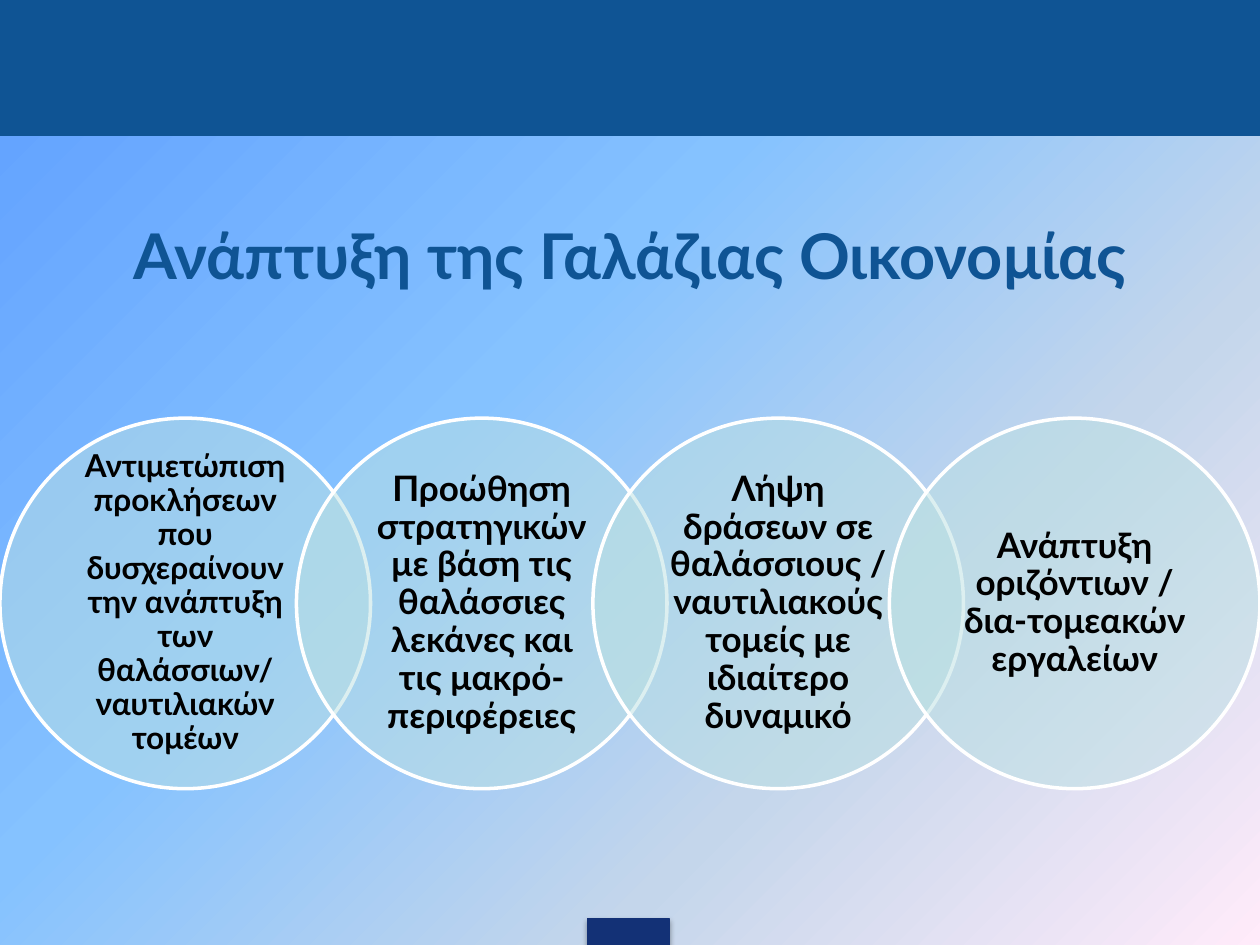
from dataclasses import dataclass
from math import sqrt

from lxml.etree import SubElement
from pptx import Presentation
from pptx.dml.color import RGBColor
from pptx.enum.shapes import MSO_SHAPE as Preset
from pptx.enum.text import MSO_ANCHOR as Anchor, PP_ALIGN as Align
from pptx.oxml.ns import qn
from pptx.shapes.autoshape import Shape
from pptx.slide import Slide
from pptx.util import Cm, Pt

WIDTH, HEIGHT = 25.4, 19.05
FONT = "Lato"
BLUE, NAVY, AQUA, WHITE, BLACK = "0F5494", "133176", "BBE0E3", "FFFFFF", "000000"
BACKGROUND = [(0, "5E9EFF"), (40, "85C2FF"), (70, "C4D6EB"), (100, "FFEBFA")]
DIAMETER, CIRCLE_TOP = 7.47, 8.43


@dataclass
class Goal:
    text: str
    size: int = 20


GOALS = [
    Goal("Αντιμετώπιση προκλήσεων που δυσχεραίνουν την ανάπτυξη των "
         "θαλάσσιων/ ναυτιλιακών τομέων", 18),
    Goal("Προώθηση στρατηγικών με βάση τις θαλάσσιες λεκάνες και τις μακρό-περιφέρειες"),
    Goal("Λήψη δράσεων σε θαλάσσιους / ναυτιλιακούς τομείς με ιδιαίτερο δυναμικό"),
    Goal("Ανάπτυξη οριζόντιων / δια-τομεακών εργαλείων"),
]


def color(code: str) -> RGBColor:
    return RGBColor.from_string(code)


def add_alpha(parent, percent: int) -> None:
    SubElement(parent, qn("a:alpha"), val=str(percent * 1000))


def paint_background(slide: Slide) -> None:
    fill = slide.background.fill
    fill.gradient()
    fill.gradient_angle = 315
    stops = next(slide.element.iter(qn("a:gsLst")))
    for stop in list(stops):
        stops.remove(stop)
    for position, code in BACKGROUND:
        stop = SubElement(stops, qn("a:gs"), pos=str(position * 1000))
        SubElement(stop, qn("a:srgbClr"), val=code)


def add_filled(shapes, preset: Preset, left: float, top: float, width: float,
               height: float, fill: str, line: str, weight: float) -> Shape:
    shape = shapes.add_shape(preset, Cm(left), Cm(top), Cm(width), Cm(height))
    shape.shadow.inherit = False
    shape.fill.solid()
    shape.fill.fore_color.rgb = color(fill)
    shape.line.color.rgb = color(line)
    shape.line.width = Pt(weight)
    return shape


def add_drop_shadow(shape: Shape) -> None:
    effects = shape.element.spPr.find(qn("a:effectLst"))
    shadow = SubElement(effects, qn("a:outerShdw"), blurRad=str(Pt(3.1)),
                        dist=str(Pt(1.8)), dir="5400000", rotWithShape="0")
    add_alpha(SubElement(shadow, qn("a:srgbClr"), val=BLACK), 35)


def add_label(shapes, text: str, left: float, top: float, width: float, height: float,
              size: int, code: str, spacing: float = 1.0,
              inset: tuple[float, float] = (0.25, 0.13)) -> None:
    box = shapes.add_textbox(Cm(left), Cm(top), Cm(width), Cm(height))
    frame = box.text_frame
    frame.word_wrap = True
    frame.vertical_anchor = Anchor.MIDDLE
    frame.margin_left = frame.margin_right = Cm(inset[0])
    frame.margin_top = frame.margin_bottom = Cm(inset[1])
    para = frame.paragraphs[0]
    para.alignment = Align.CENTER
    para.line_spacing = spacing
    span = para.add_run()
    span.text = text
    span.font.name = FONT
    span.font.size = Pt(size)
    span.font.bold = True
    span.font.color.rgb = color(code)


def add_goal(shapes, goal: Goal, left: float) -> None:
    """Draw a translucent circle with its text in the inscribed square."""
    circle = add_filled(shapes, Preset.OVAL, left, CIRCLE_TOP, DIAMETER, DIAMETER,
                        AQUA, WHITE, 2)
    add_alpha(circle.element.spPr.find(qn("a:solidFill"))[0], 50)
    side = DIAMETER / sqrt(2)
    margin = (DIAMETER - side) / 2
    add_label(shapes, goal.text, left + margin, CIRCLE_TOP + margin, side, side,
              goal.size, BLACK, spacing=0.9, inset=(0.41, 0.08))


def main() -> None:
    deck = Presentation()
    deck.slide_width, deck.slide_height = Cm(WIDTH), Cm(HEIGHT)
    slide = deck.slides.add_slide(deck.slide_layouts[6])
    paint_background(slide)

    add_filled(slide.shapes, Preset.RECTANGLE, 0, 0, WIDTH, 2.74, BLUE, BLUE, 0.75)
    tab = add_filled(slide.shapes, Preset.RECTANGLE, 11.84, 18.52, 1.65, 0.55,
                     NAVY, NAVY, 0.75)
    add_drop_shadow(tab)
    add_label(slide.shapes, "Ανάπτυξη της Γαλάζιας Οικονομίας", 0, 3.53, WIDTH, 3.2,
              36, BLUE)

    chain = slide.shapes.add_group_shape()
    step = (WIDTH - DIAMETER) / (len(GOALS) - 1)
    for index, goal in enumerate(GOALS):
        add_goal(chain.shapes, goal, index * step)

    deck.save("out.pptx")


if __name__ == "__main__":
    main()
